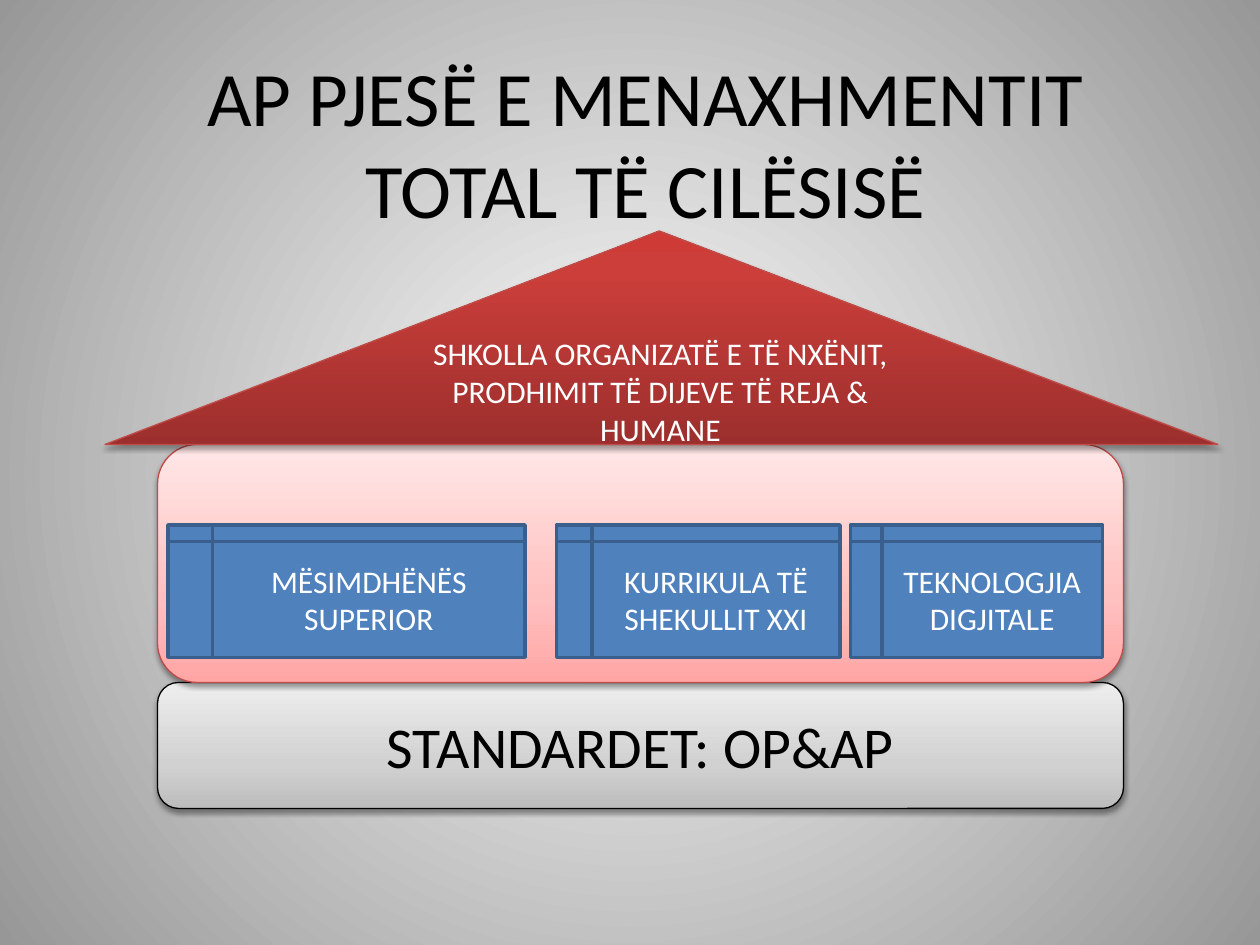
from dataclasses import dataclass
from typing import Optional

import pptx
import pptx.dml.color
import pptx.enum.shapes
import pptx.enum.text
import pptx.oxml
import pptx.oxml.ns
import pptx.util
from lxml import etree

Pt = pptx.util.Pt
RGBColor = pptx.dml.color.RGBColor
Shape = pptx.enum.shapes.MSO_SHAPE
qn = pptx.oxml.ns.qn

FONT = "Calibri"
BLACK = RGBColor(0x00, 0x00, 0x00)
WHITE = RGBColor(0xFF, 0xFF, 0xFF)
BLUE = RGBColor(0x4F, 0x81, 0xBD)
DARK_BLUE = RGBColor(0x3A, 0x5F, 0x8C)
RED = RGBColor(0xBF, 0x4C, 0x48)

# Gradient stops: (position in percent, colour)
BACKDROP = ((0, WHITE), (100, RGBColor(0x97, 0x97, 0x97)))
GREYS = ((0, RGBColor(0xBD, 0xBD, 0xBD)), (35, RGBColor(0xD1, 0xD1, 0xD1)),
         (100, RGBColor(0xEE, 0xEE, 0xEE)))
PINKS = ((0, RGBColor(0xFF, 0xA6, 0xA5)), (35, RGBColor(0xFF, 0xC0, 0xBF)),
         (100, RGBColor(0xFF, 0xE7, 0xE7)))
REDS = ((0, RGBColor(0x9C, 0x2F, 0x2D)), (80, RGBColor(0xCB, 0x3E, 0x3A)),
        (100, RGBColor(0xCE, 0x3B, 0x37)))


@dataclass
class Block:
    kind: Shape
    left: float
    top: float
    width: float
    height: float
    line: RGBColor
    line_width: float = 0.75
    text: str = ""
    size: float = 18
    color: RGBColor = WHITE
    stops: Optional[tuple] = None
    shadow_opacity: int = 38
    shadow_distance: float = 1.6
    adjustment: Optional[float] = None


def set_gradient(fill, owner, stops: tuple, radial: bool = False) -> None:
    """Fill with the stops, either from the centre out or from bottom to top."""
    fill.gradient()
    gradient = owner.find(".//" + qn("a:gradFill"))
    for child in list(gradient):
        gradient.remove(child)
    stop_list = etree.SubElement(gradient, qn("a:gsLst"))
    for position, color in stops:
        stop = etree.SubElement(stop_list, qn("a:gs"), pos=str(position * 1000))
        etree.SubElement(stop, qn("a:srgbClr"), val=str(color))
    if radial:
        route = etree.SubElement(gradient, qn("a:path"), path="circle")
        etree.SubElement(route, qn("a:fillToRect"),
                         {side: "50000" for side in "ltrb"})
    else:
        etree.SubElement(gradient, qn("a:lin"), ang="16200000", scaled="0")


def add_shadow(shape, opacity: int, distance: float) -> None:
    effects = shape._element.spPr.find(qn("a:effectLst"))
    shadow = etree.SubElement(
        effects, qn("a:outerShdw"), blurRad=str(Pt(3.1)), dist=str(Pt(distance)),
        dir="5400000", rotWithShape="0")
    color = etree.SubElement(shadow, qn("a:srgbClr"), val=str(BLACK))
    etree.SubElement(color, qn("a:alpha"), val=str(opacity * 1000))


def write_text(shape, text: str, size: float, color: RGBColor) -> None:
    frame = shape.text_frame
    frame.word_wrap = True
    frame.vertical_anchor = pptx.enum.text.MSO_ANCHOR.MIDDLE
    paragraph = frame.paragraphs[0]
    paragraph.alignment = pptx.enum.text.PP_ALIGN.CENTER
    run = paragraph.add_run()
    run.text = text
    for name, value in {"name": FONT, "size": Pt(size)}.items():
        setattr(run.font, name, value)
    run.font.color.rgb = color


def draw_block(slide, block: Block) -> None:
    shape = slide.shapes.add_shape(
        block.kind, Pt(block.left), Pt(block.top), Pt(block.width), Pt(block.height))
    shape.shadow.inherit = False
    if block.adjustment is not None:
        shape.adjustments[0] = block.adjustment
    if block.stops:
        set_gradient(shape.fill, shape._element, block.stops)
        add_shadow(shape, block.shadow_opacity, block.shadow_distance)
    else:
        shape.fill.solid()
        shape.fill.fore_color.rgb = BLUE
    shape.line.color.rgb = block.line
    shape.line.width = Pt(block.line_width)
    if block.text:
        write_text(shape, block.text, block.size, block.color)


# The house: foundation, wall and roof
HOUSE = (
    Block(Shape.ROUNDED_RECTANGLE, 90, 390, 552, 72, BLACK, text="STANDARDET: OP&AP",
          size=33, color=BLACK, stops=GREYS),
    Block(Shape.ROUNDED_RECTANGLE, 90, 254, 552, 136, RED, stops=PINKS),
    Block(Shape.ISOSCELES_TRIANGLE, 60, 132, 636, 122, RED, stops=REDS,
          text="SHKOLLA ORGANIZATË E TË NXËNIT, PRODHIMIT TË DIJEVE TË REJA & HUMANE",
          shadow_opacity=35, shadow_distance=1.8, adjustment=0.498),
)

# The pillars inside the wall: left, width, text
PILLARS = (
    (96, 204, "MËSIMDHËNËS SUPERIOR"),
    (318, 162, "KURRIKULA TË SHEKULLIT XXI"),
    (486, 144, "TEKNOLOGJIA DIGJITALE"),
)


def main() -> None:
    presentation = pptx.Presentation()
    presentation.slide_width, presentation.slide_height = Pt(720), Pt(540)
    slide = presentation.slides.add_slide(presentation.slide_layouts[0])
    set_gradient(slide.background.fill, slide._element, BACKDROP, radial=True)

    # Title; the subtitle is not needed
    subtitle = slide.placeholders[1]._element
    subtitle.getparent().remove(subtitle)
    title = slide.shapes.title
    place = {"left": 54, "top": 12, "width": 630, "height": 138}
    for name, value in place.items():
        setattr(title, name, Pt(value))
    write_text(title, "AP PJESË E MENAXHMENTIT TOTAL TË CILËSISË", 44, BLACK)

    for block in HOUSE:
        draw_block(slide, block)
    for left, width, text in PILLARS:
        draw_block(slide, Block(Shape.FLOWCHART_INTERNAL_STORAGE, left, 300, width, 75.6,
                                DARK_BLUE, line_width=2, text=text))

    presentation.save("out.pptx")


if __name__ == "__main__":
    main()
